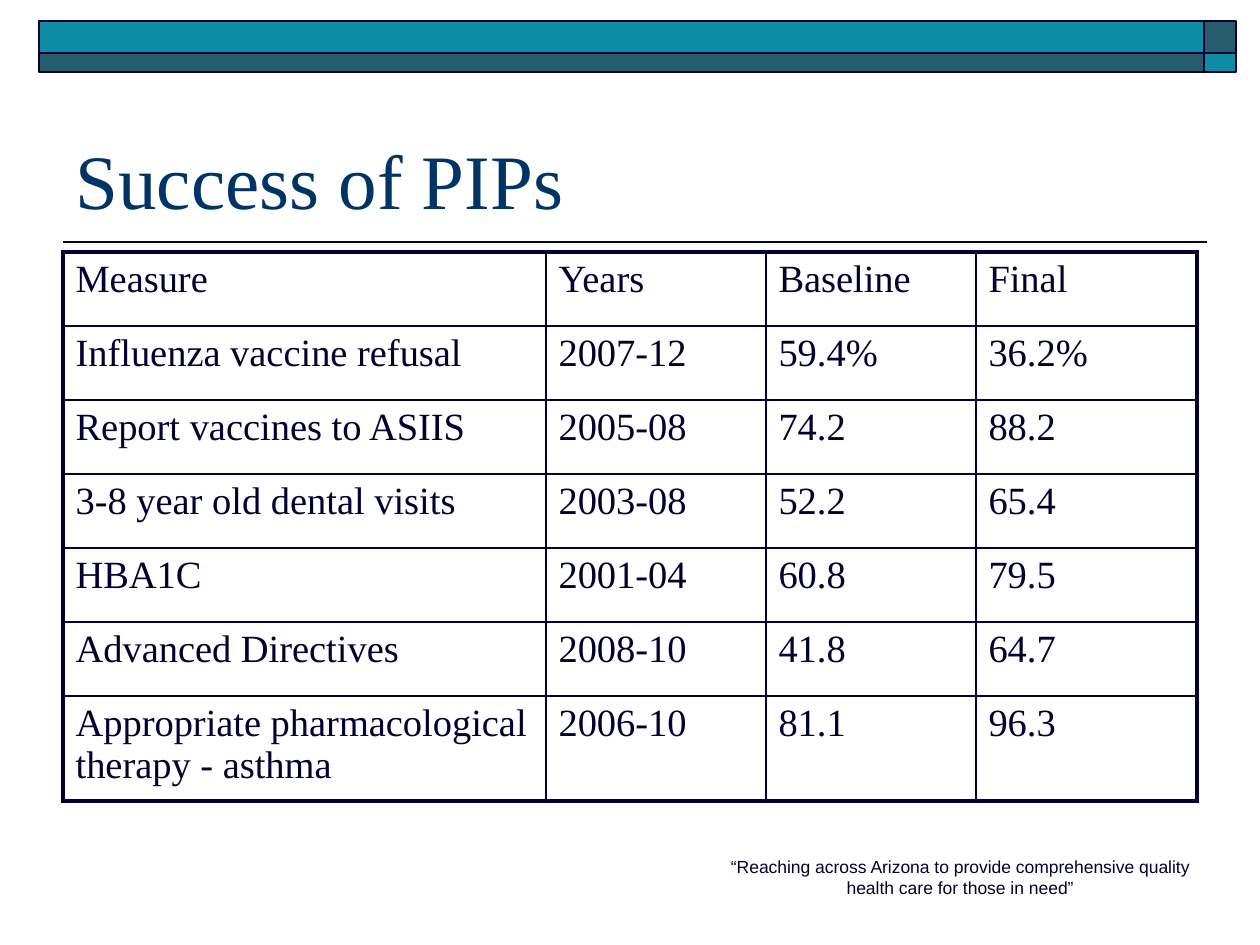
import pptx
import pptx.dml.color
import pptx.enum.shapes
import pptx.enum.text
import pptx.oxml
import pptx.oxml.ns
import pptx.util

SCALE = 914400 / 126  # EMU in one px
NAVY = pptx.dml.color.RGBColor(0x00, 0x00, 0x33)
BLUE = pptx.dml.color.RGBColor(0x00, 0x33, 0x66)
TEAL = pptx.dml.color.RGBColor(0x10, 0x8D, 0xA6)
SLATE = pptx.dml.color.RGBColor(0x27, 0x5C, 0x6D)
WHITE = pptx.dml.color.RGBColor(0xFF, 0xFF, 0xFF)


def px(*lengths):
    return [pptx.util.Emu(round(length * SCALE)) for length in lengths]


def write(frame, text, font="Times New Roman", size=22, color=NAVY,
          align=pptx.enum.text.PP_ALIGN.LEFT, anchor=pptx.enum.text.MSO_ANCHOR.TOP):
    frame.word_wrap = True
    frame.vertical_anchor = anchor
    para = frame.paragraphs[0]
    para.alignment = align
    span = para.add_run()
    span.text = text
    span.font.name = font
    span.font.size = pptx.util.Pt(size)
    span.font.color.rgb = color


deck = pptx.Presentation()
deck.slide_width, deck.slide_height = px(1260, 945)
page = deck.slides.add_slide(deck.slide_layouts[5])
page.background.fill.solid()
page.background.fill.fore_color.rgb = WHITE

# Rule under the title
rule = page.shapes.add_connector(
    pptx.enum.shapes.MSO_CONNECTOR.STRAIGHT, *px(1207, 242, 63, 242))
rule.line.color.rgb = NAVY
rule.line.width = pptx.util.Pt(1)
rule._element.spPr.append(pptx.oxml.parse_xml(
    f'<a:effectLst {pptx.oxml.ns.nsdecls("a")}/>'))

# Two-tone band across the top, colours swapped at the right end
for left, width, colors in ((39, 1165, (TEAL, SLATE)), (1204, 32, (SLATE, TEAL))):
    for top, height, color in zip((21, 53), (32, 19), colors):
        band = page.shapes.add_shape(
            pptx.enum.shapes.MSO_SHAPE.RECTANGLE, *px(left, top, width, height))
        band.shadow.inherit = False
        band.fill.solid()
        band.fill.fore_color.rgb = color
        band.line.color.rgb = NAVY
        band.line.width = pptx.util.Pt(1)

# Title
title = page.shapes.title
title.left, title.top, title.width, title.height = px(63, 73, 1134, 158)
title.text_frame.auto_size = pptx.enum.text.MSO_AUTO_SIZE.NONE
write(title.text_frame, "Success of PIPs", size=44, color=BLUE,
      anchor=pptx.enum.text.MSO_ANCHOR.BOTTOM)

# Motto
motto = page.shapes.add_textbox(*px(703, 850, 514, 55))
write(motto.text_frame,
      "“Reaching across Arizona to provide comprehensive quality health care for those in need”",
      font="Arial", size=10, align=pptx.enum.text.PP_ALIGN.CENTER)

# Table of results
rows = [
    ("Measure", "Years", "Baseline", "Final"),
    ("Influenza vaccine refusal", "2007-12", "59.4%", "36.2%"),
    ("Report vaccines to ASIIS", "2005-08", "74.2", "88.2"),
    ("3-8 year old dental visits", "2003-08", "52.2", "65.4"),
    ("HBA1C", "2001-04", "60.8", "79.5"),
    ("Advanced Directives", "2008-10", "41.8", "64.7"),
    ("Appropriate pharmacological therapy - asthma", "2006-10", "81.1", "96.3"),
]
widths = px(483, 220, 210, 221)
heights = px(*[74] * 6, 98)
table = page.shapes.add_table(
    len(rows), len(widths), *px(63, 252), sum(widths), sum(heights)).table
table.first_row = table.horz_banding = False
for column, width in zip(table.columns, widths):
    column.width = width
for line, height in zip(table.rows, heights):
    line.height = height

for r, row in enumerate(rows):
    for c, text in enumerate(row):
        cell = table.cell(r, c)
        write(cell.text_frame, text)
        cell.fill.background()
        # Heavy border on the outer edges, thin inside
        outer = {"lnL": c == 0, "lnR": c == len(row) - 1,
                 "lnT": r == 0, "lnB": r == len(rows) - 1}
        properties = cell._tc.get_or_add_tcPr()
        for position, (edge, heavy) in enumerate(outer.items()):
            width = pptx.util.Pt(2.25 if heavy else 1)
            properties.insert(position, pptx.oxml.parse_xml(
                f'<a:{edge} {pptx.oxml.ns.nsdecls("a")} w="{width}"><a:solidFill>'
                f'<a:srgbClr val="{NAVY}"/></a:solidFill></a:{edge}>'))

deck.save("out.pptx")
